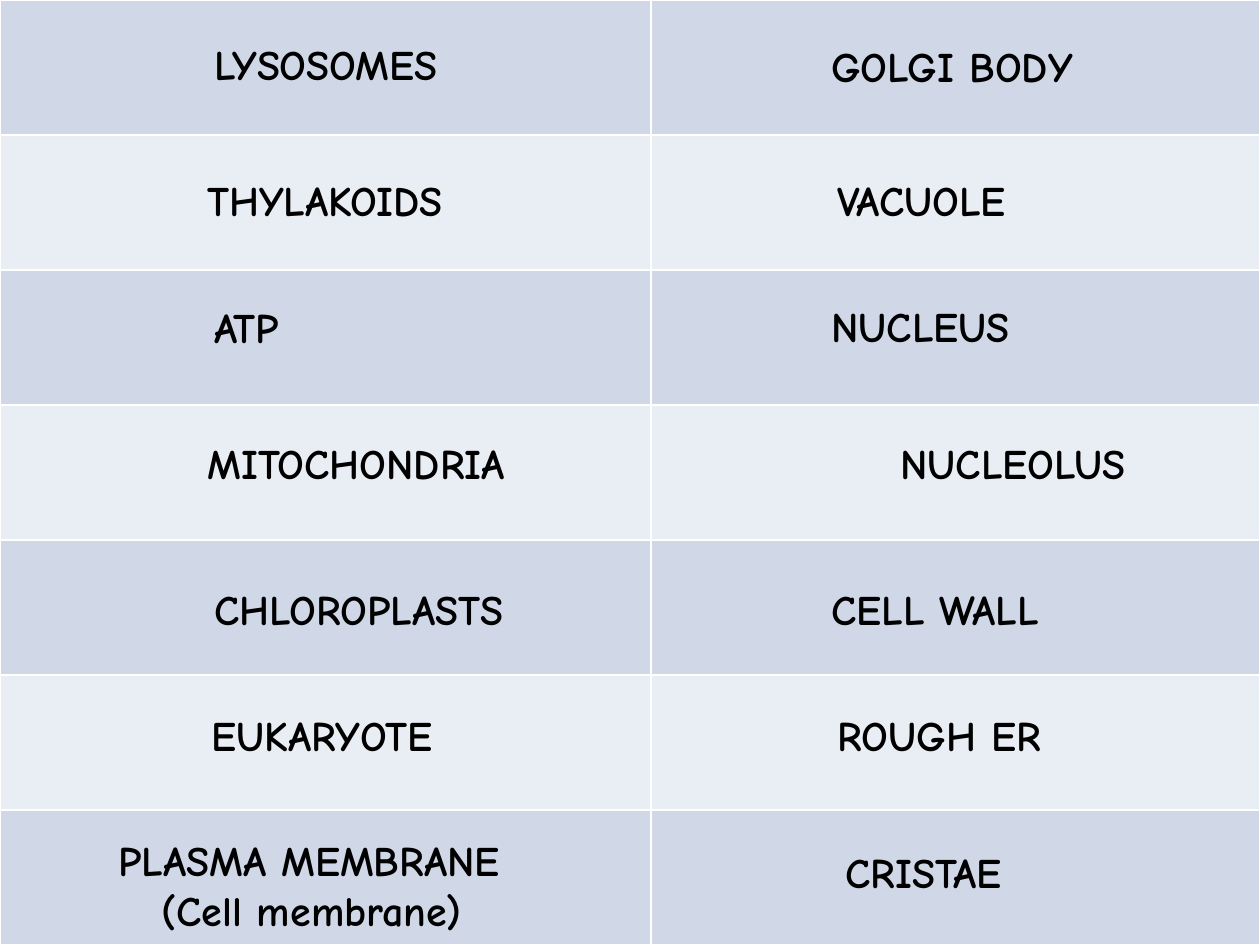
from lxml.etree import SubElement
from pptx import Presentation
from pptx.dml.color import RGBColor
from pptx.enum.text import MSO_ANCHOR
from pptx.oxml.ns import qn
from pptx.util import Emu, Pt

PX = 914400 / 126  # EMU in one px
WIDTH, HEIGHT = 1260, 945
ROWS = 7
COLUMNS = (651, 609)
BANDS = ("D0D8E8", "E9EDF4")
FONT = "Comic Neue"

# Each term: lines, left, top, width, height
TERMS = [
    (["LYSOSOMES"], 202, 32, 296, 63),
    (["GOLGI BODY"], 819, 34, 300, 63),
    (["THYLAKOIDS"], 195, 168, 311, 63),
    (["VACUOLE"], 825, 168, 227, 63),
    (["ATP"], 202, 295, 152, 63),
    (["NUCLEUS"], 819, 294, 228, 63),
    (["MITOCHONDRIA"], 195, 431, 388, 63),
    (["NUCLEOLUS"], 888, 431, 285, 63),
    (["CHLOROPLASTS"], 202, 577, 368, 63),
    (["CELL WALL"], 819, 577, 266, 63),
    (["EUKARYOTE"], 199, 703, 284, 63),
    (["ROUGH ER"], 825, 703, 251, 63),
    (["PLASMA MEMBRANE", "(Cell membrane)"], 106, 828, 478, 115),
    (["CRISTAE"], 833, 840, 218, 63),
]


def px(length):
    return Emu(round(length * PX))


def color(value):
    return RGBColor.from_string(value)


def add_border(cell, value="FFFFFF", points=1):
    properties = cell._tc.get_or_add_tcPr()
    for side in ("a:lnL", "a:lnR", "a:lnT", "a:lnB"):
        line = SubElement(properties, qn(side), w=str(Pt(points)))
        fill = SubElement(line, qn("a:solidFill"))
        SubElement(fill, qn("a:srgbClr"), val=value)


def add_text(slide, lines, left, top, width, height, size=24, bold=True,
             ink="000000", indent=43):
    frame = slide.shapes.add_textbox(
        px(left), px(top), px(width), px(height)).text_frame
    frame.word_wrap = True
    frame.vertical_anchor = MSO_ANCHOR.TOP
    for number, line in enumerate(lines):
        paragraph = frame.add_paragraph() if number else frame.paragraphs[0]
        if number:  # a second line sits further in
            paragraph._p.get_or_add_pPr().set("marL", str(px(indent)))
        run = paragraph.add_run()
        run.text = line
        run.font.name = FONT
        run.font.size = Pt(size)
        run.font.bold = bold
        run.font.color.rgb = color(ink)


def add_card_grid(slide, left, top, width, height):
    grid = slide.shapes.add_table(
        ROWS, len(COLUMNS), px(left), px(top), px(width), px(height)).table
    grid.first_row = False
    grid.horz_banding = False
    for column, column_width in zip(grid.columns, COLUMNS):
        column.width = px(column_width)
    for number, row in enumerate(grid.rows):
        row.height = px(height / ROWS)
        for cell in row.cells:
            add_border(cell)
            cell.fill.solid()
            cell.fill.fore_color.rgb = color(BANDS[number % 2])


def add_terms(slide, left, top):
    for lines, x, y, width, height in TERMS:
        add_text(slide, lines, left + x, top + y, width, height)


def main():
    deck = Presentation()
    deck.slide_width, deck.slide_height = px(WIDTH), px(HEIGHT)
    slide = deck.slides.add_slide(deck.slide_layouts[6])

    # Banded cards, then the cell terms on top
    add_card_grid(slide, 0, 0, WIDTH, HEIGHT)
    add_terms(slide, 0, 0)
    deck.save("out.pptx")


if __name__ == "__main__":
    main()
